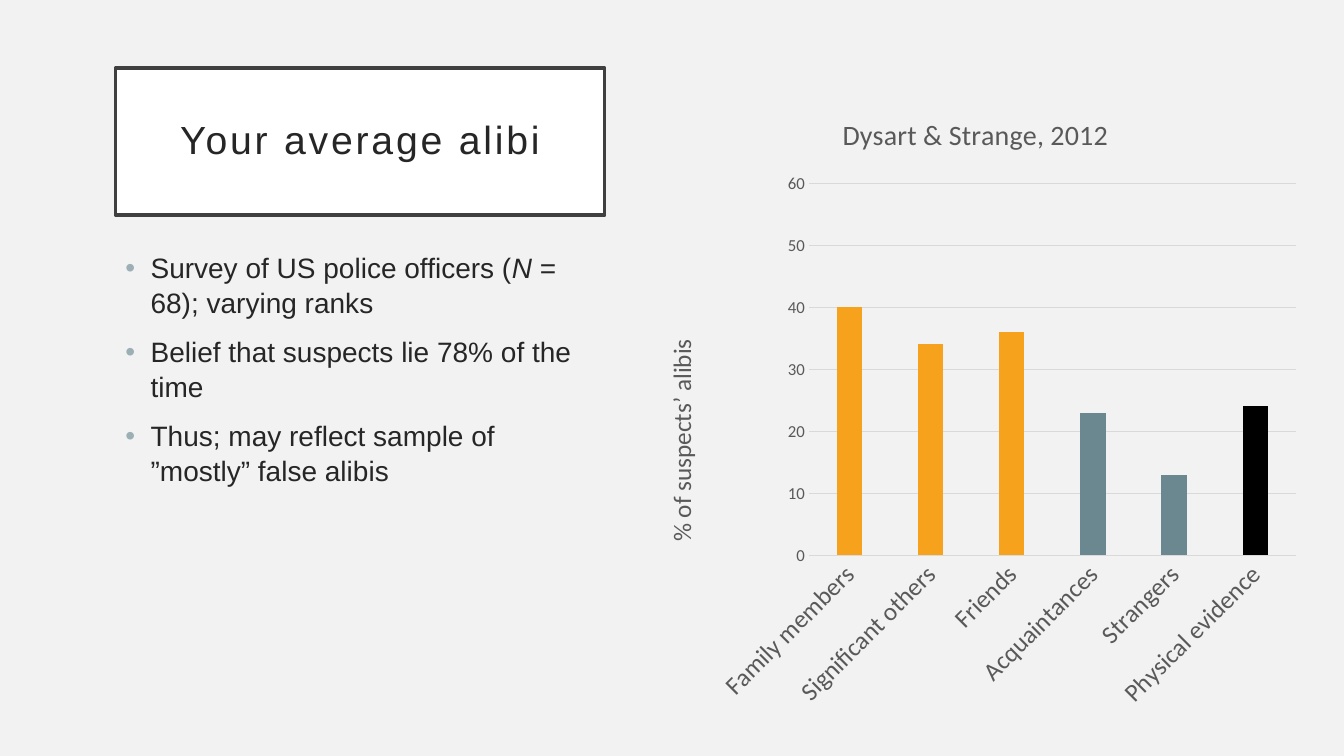
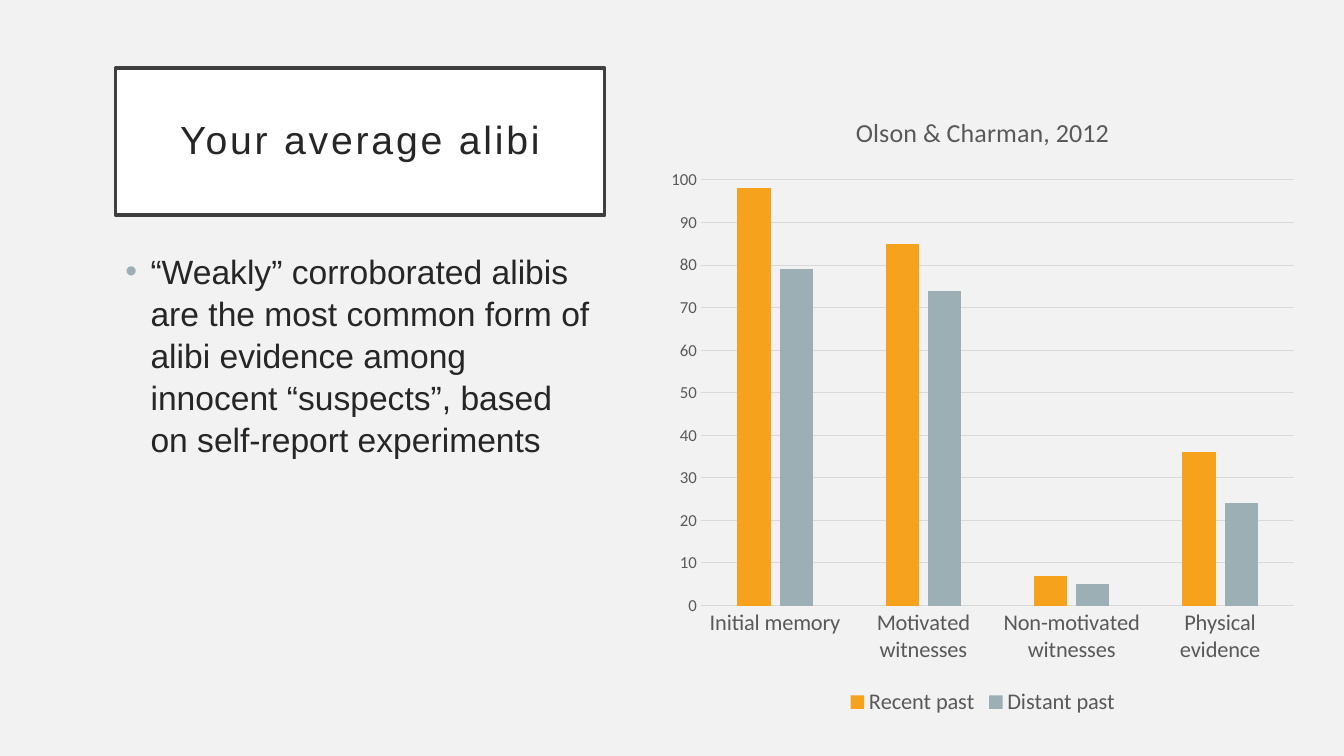
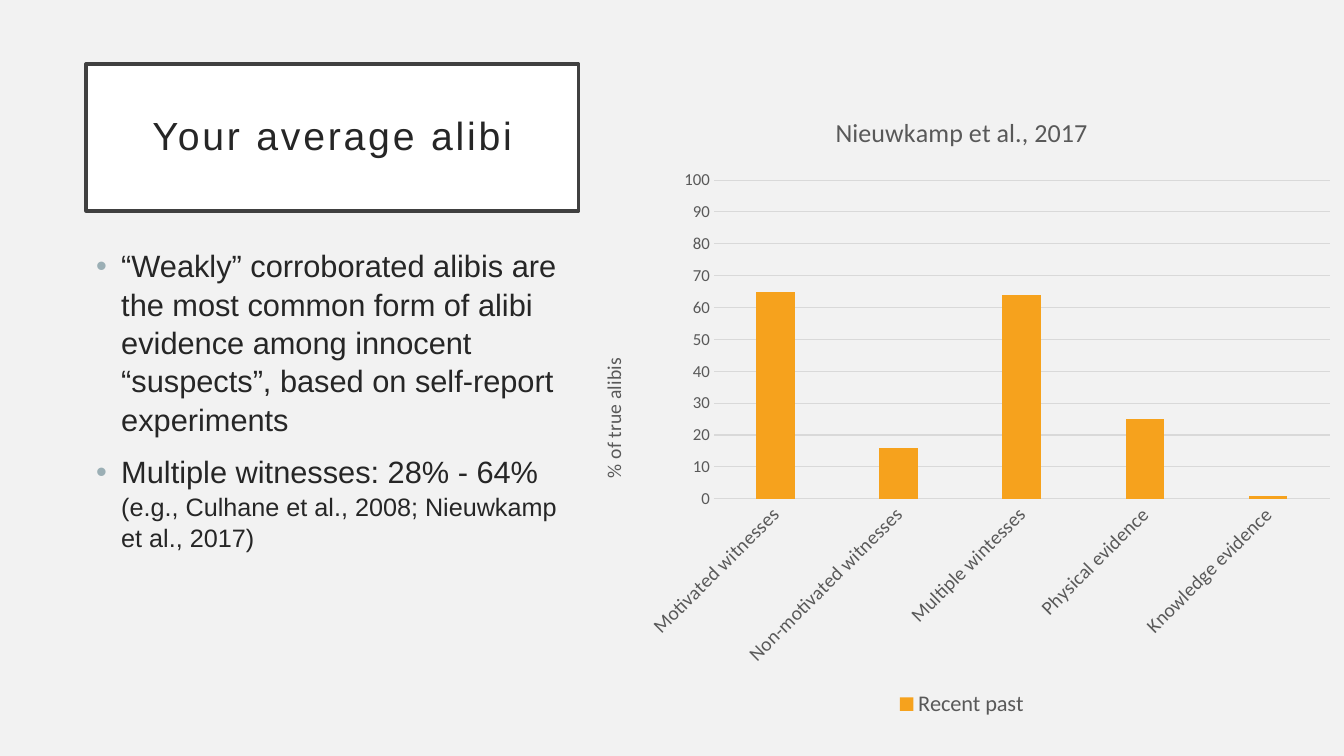
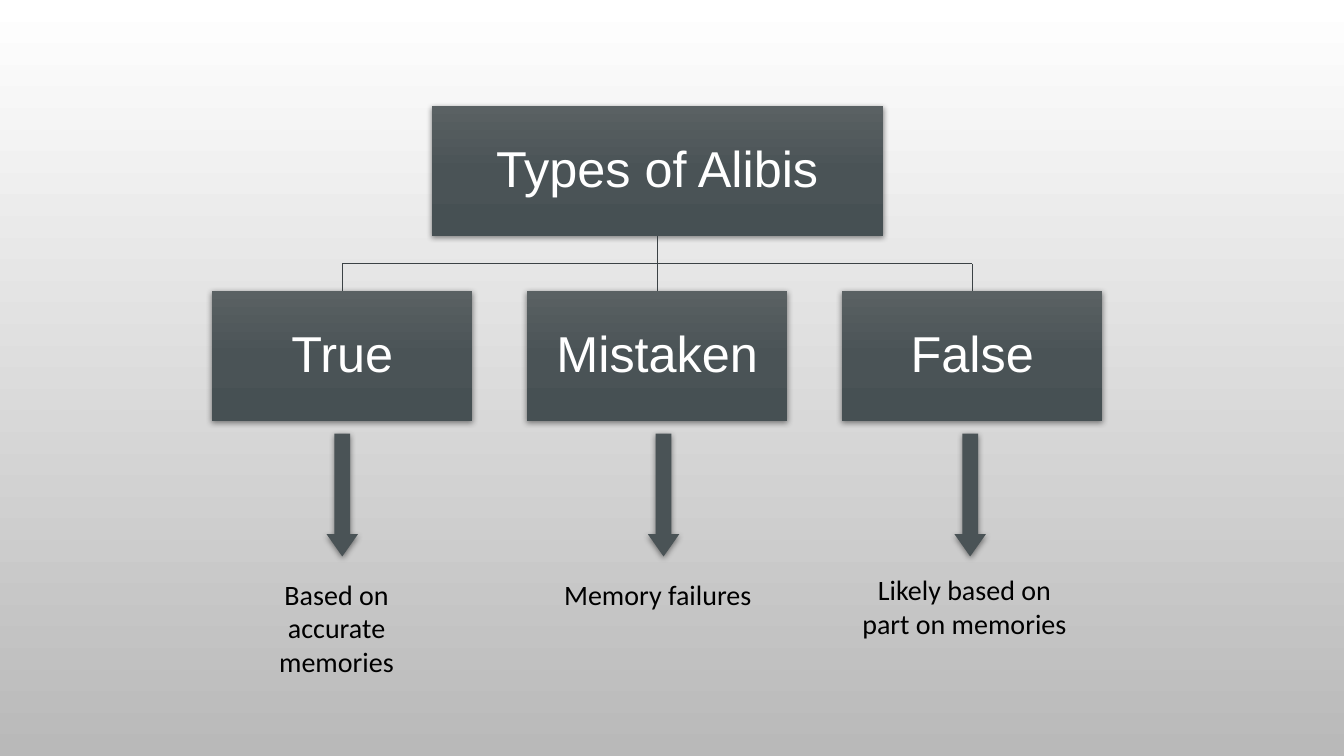
from copy import deepcopy
from dataclasses import dataclass

from pptx import Presentation
from pptx.chart.data import CategoryChartData
from pptx.dml.color import RGBColor
from pptx.enum.chart import XL_CHART_TYPE, XL_LEGEND_POSITION, XL_TICK_MARK
from pptx.enum.shapes import MSO_CONNECTOR, MSO_SHAPE
from pptx.enum.text import MSO_ANCHOR, PP_ALIGN
from pptx.oxml import parse_xml
from pptx.oxml.ns import nsdecls, qn
from pptx.util import Pt

PX = 9525


@dataclass(frozen=True)
class Theme:
    page: RGBColor = RGBColor.from_string("F2F2F2")
    white: RGBColor = RGBColor.from_string("FFFFFF")
    black: RGBColor = RGBColor.from_string("000000")
    ink: RGBColor = RGBColor.from_string("262626")
    frame: RGBColor = RGBColor.from_string("404040")
    chart_text: RGBColor = RGBColor.from_string("595959")
    grid: RGBColor = RGBColor.from_string("D9D9D9")
    orange: RGBColor = RGBColor.from_string("F6A21D")
    mist: RGBColor = RGBColor.from_string("9BAFB5")
    teal: RGBColor = RGBColor.from_string("6B8891")
    page_end: RGBColor = RGBColor.from_string("B9B9B9")
    slate_top: RGBColor = RGBColor.from_string("5A6163")
    slate: RGBColor = RGBColor.from_string("4A5356")
    slate_bottom: RGBColor = RGBColor.from_string("465053")
    link: RGBColor = RGBColor.from_string("3B4245")
    heading_font: str = "Arial"
    chart_font: str = "Calibri"
    title_size: int = 28
    node_size: int = 36
    label_size: int = 20
    legend_size: int = 16
    value_size: int = 12


theme = Theme()


def write(frame, paragraphs, size, color, font=theme.heading_font, align=None, anchor=None,
          inset=None, line_spacing=None, tracking=None, bullet=None):
    if anchor is not None:
        frame.word_wrap = True
        frame.vertical_anchor = anchor
    if inset is not None:
        frame.margin_left = frame.margin_right = inset * PX
        frame.margin_top = frame.margin_bottom = inset * PX
    for index, spans in enumerate(paragraphs):
        para = frame.add_paragraph() if index else frame.paragraphs[0]
        if align is not None:
            para.alignment = align
        if line_spacing is not None:
            para.line_spacing = line_spacing
        if bullet is not None:
            para.space_before = Pt(10)
            properties = para._p.get_or_add_pPr()
            properties.set("marL", str(24 * PX))
            properties.set("indent", str(-24 * PX))
            for markup in (f'<a:buClr {nsdecls("a")}><a:srgbClr val="{bullet}"/></a:buClr>',
                           f'<a:buFont {nsdecls("a")} typeface="Arial"/>',
                           f'<a:buChar {nsdecls("a")} char="•"/>'):
                properties.append(parse_xml(markup))
        for text, changes in spans:
            span = para.add_run()
            span.text = text
            span.font.name = font
            span.font.size = Pt(changes.get("size", size))
            span.font.bold = False
            span.font.italic = changes.get("italic", False)
            span.font.color.rgb = color
            if tracking is not None:
                span._r.get_or_add_rPr().set("spc", str(tracking * 100))


def paint_gradient(fill, element, colors):
    fill.gradient()
    fill.gradient_angle = 270
    stop_list = next(element.iter(qn("a:gsLst")))
    for _ in colors[2:]:
        stop_list.append(deepcopy(stop_list[-1]))
    for index, (stop, color) in enumerate(zip(fill.gradient_stops, colors)):
        stop.color.rgb = color
        stop.position = index / (len(colors) - 1)


deck = Presentation()
deck.slide_width = 1280 * PX
deck.slide_height = 720 * PX
blank = deck.slide_layouts[6]
deck.slide_master.background.fill.solid()
deck.slide_master.background.fill.fore_color.rgb = theme.page

weakly = ("“Weakly” corroborated alibis are the most common form of alibi evidence among "
          "innocent “suspects”, based on self-report experiments")

chart_pages = [
    dict(
        panel=(110, 65, 466), body_size=20, chart_box=(611, 87, 636, 599),
        body=[
            [("Survey of US police officers (", {}), ("N", {"italic": True}),
             (" = 68); varying ranks", {})],
            [("Belief that suspects lie 78% of the time", {})],
            [("Thus; may reflect sample of ”mostly” false alibis", {})],
        ],
        title="Dysart & Strange, 2012", title_size=20, category_size=18, maximum=60,
        axis_title="% of suspects’ alibis", slanted=True, legend=False,
        categories=["Family members", "Significant others", "Friends", "Acquaintances",
                    "Strangers", "Physical evidence"],
        series=[("Series 1", [40, 34, 36, 23, 13, 24], theme.orange)],
        points={3: theme.teal, 4: theme.teal, 5: theme.black},
    ),
    dict(
        panel=(110, 65, 466), body_size=24, chart_box=(627, 87, 618, 599),
        body=[[(weakly, {})]],
        title="Olson & Charman, 2012", title_size=18.6, category_size=16, maximum=100,
        axis_title=None, slanted=False, legend=True,
        categories=["Initial memory", "Motivated witnesses", "Non-motivated witnesses",
                    "Physical evidence"],
        series=[("Recent past", [98, 85, 7, 36], theme.orange),
                ("Distant past", [79, 74, 5, 24], theme.mist)],
        points={},
    ),
    dict(
        panel=(82, 61, 469), body_size=22, chart_box=(551, 87, 730, 601),
        body=[
            [(weakly, {})],
            [("Multiple witnesses: 28% - 64% ", {}),
             ("(e.g., Culhane et al., 2008; Nieuwkamp et al., 2017)", {"size": 18})],
        ],
        title="Nieuwkamp et al., 2017", title_size=18.6, category_size=14, maximum=100,
        axis_title="% of true alibis", slanted=True, legend=True,
        categories=["Motivated witnesses", "Non-motivated witnesses", "Multiple wintesses",
                    "Physical evidence", "Knowledge evidence"],
        series=[("Recent past", [65, 16, 64, 25, 1], theme.orange)],
        points={},
    ),
]

for content in chart_pages:
    page = deck.slides.add_slide(blank)
    left, top, width = content["panel"]

    title_box = page.shapes.add_shape(MSO_SHAPE.RECTANGLE, left * PX, top * PX, width * PX, 140 * PX)
    title_box.shadow.inherit = False
    title_box.fill.solid()
    title_box.fill.fore_color.rgb = theme.white
    title_box.line.color.rgb = theme.frame
    title_box.line.width = Pt(2.5)
    write(title_box.text_frame, [[("Your average alibi", {})]], theme.title_size, theme.ink,
          align=PP_ALIGN.CENTER, anchor=MSO_ANCHOR.MIDDLE, inset=19, line_spacing=0.9, tracking=2)

    body_box = page.shapes.add_textbox(left * PX, (top + 168) * PX, width * PX, 420 * PX)
    write(body_box.text_frame, content["body"], content["body_size"], theme.ink,
          anchor=MSO_ANCHOR.TOP, line_spacing=1.04, bullet=theme.mist)

    data = CategoryChartData()
    data.categories = content["categories"]
    for name, values, _ in content["series"]:
        data.add_series(name, values)
    chart = page.shapes.add_chart(XL_CHART_TYPE.COLUMN_CLUSTERED,
                                  *[length * PX for length in content["chart_box"]], data).chart
    chart.font.name = theme.chart_font
    chart.font.size = Pt(10)
    chart.has_title = True
    write(chart.chart_title.text_frame, [[(content["title"], {})]], content["title_size"],
          theme.chart_text, font=theme.chart_font)

    plot = chart.plots[0]
    plot.gap_width = 219
    plot.overlap = -27
    plot.vary_by_categories = False
    for series, (_, _, color) in zip(plot.series, content["series"]):
        series.invert_if_negative = False
        series.format.fill.solid()
        series.format.fill.fore_color.rgb = color
    for index, color in content["points"].items():
        point_fill = plot.series[0].points[index].format.fill
        point_fill.solid()
        point_fill.fore_color.rgb = color

    category_axis, value_axis = chart.category_axis, chart.value_axis
    for axis, size in ((category_axis, content["category_size"]), (value_axis, theme.value_size)):
        axis.major_tick_mark = XL_TICK_MARK.NONE
        axis.minor_tick_mark = XL_TICK_MARK.NONE
        axis.tick_labels.font.name = theme.chart_font
        axis.tick_labels.font.size = Pt(size)
        axis.tick_labels.font.color.rgb = theme.chart_text
    value_axis.minimum_scale = 0
    value_axis.maximum_scale = content["maximum"]
    value_axis.major_unit = 10
    value_axis.has_major_gridlines = True
    value_axis.format.line.fill.background()
    for line in (category_axis.format.line, value_axis.major_gridlines.format.line):
        line.color.rgb = theme.grid
        line.width = Pt(0.75)
    if content["slanted"]:
        labels = next(chart.element.iter(qn("c:catAx"))).find(qn("c:txPr"))
        labels.find(qn("a:bodyPr")).set("rot", "-2700000")
    if content["axis_title"]:
        value_axis.has_title = True
        write(value_axis.axis_title.text_frame, [[(content["axis_title"], {})]],
              content["category_size"], theme.chart_text, font=theme.chart_font)
        heading = next(chart.element.iter(qn("c:valAx"))).find(qn("c:title"))
        next(heading.iter(qn("a:bodyPr"))).set("rot", "-5400000")
    chart.has_legend = content["legend"]
    if content["legend"]:
        chart.legend.position = XL_LEGEND_POSITION.BOTTOM
        chart.legend.include_in_layout = False
        chart.legend.font.name = theme.chart_font
        chart.legend.font.size = Pt(theme.legend_size)
        chart.legend.font.color.rgb = theme.chart_text

page = deck.slides.add_slide(blank)
paint_gradient(page.background.fill, page.element, [theme.white, theme.page_end])

nodes = [("Types of Alibis", 411, 101, 430)]
for column, name in enumerate(("True", "Mistaken", "False")):
    nodes.append((name, 202 + 300 * column, 277, 248))

boxes = []
for name, left, top, width in nodes:
    box = page.shapes.add_shape(MSO_SHAPE.RECTANGLE, left * PX, top * PX, width * PX, 124 * PX)
    paint_gradient(box.fill, box.element, [theme.slate_top, theme.slate, theme.slate_bottom])
    write(box.text_frame, [[(name, {})]], theme.node_size, theme.white, align=PP_ALIGN.CENTER,
          anchor=MSO_ANCHOR.MIDDLE, inset=3, line_spacing=0.9)
    boxes.append(box)
root, true_box, mistaken_box, false_box = boxes

bar_top = 251
links = [
    (626, 225, 626, 277, root, mistaken_box),
    (326, bar_top, 926, bar_top, None, None),
    (326, bar_top, 326, 277, None, true_box),
    (926, bar_top, 926, 277, None, false_box),
]
for *ends, start_box, end_box in links:
    link = page.shapes.add_connector(MSO_CONNECTOR.STRAIGHT, *[length * PX for length in ends])
    link.line.color.rgb = theme.link
    link.line.width = Pt(1)
    link.element.spPr.append(parse_xml(f'<a:effectLst {nsdecls("a")}/>'))
    if start_box is not None:
        link.begin_connect(start_box, 2)
    if end_box is not None:
        link.end_connect(end_box, 0)

arrows = []
outcomes = [
    ("Based on accurate memories", 311, 213, 545, 74),
    ("Memory failures", 617, 519, 545, 42),
    ("Likely based on part on memories", 909, 811, 541, 74),
]
for text, arrow_left, label_left, label_top, label_height in outcomes:
    arrow = page.shapes.add_shape(MSO_SHAPE.DOWN_ARROW, arrow_left * PX, 413 * PX, 30 * PX, 117 * PX)
    arrow.adjustments[0] = 0.5
    arrow.adjustments[1] = 0.71
    arrow.fill.solid()
    arrow.fill.fore_color.rgb = theme.slate
    arrows.append(arrow)
    label = page.shapes.add_textbox(label_left * PX, label_top * PX, 215 * PX, label_height * PX)
    write(label.text_frame, [[(text, {})]], theme.label_size, theme.black, font=theme.chart_font,
          align=PP_ALIGN.CENTER, anchor=MSO_ANCHOR.TOP)

for shape in boxes + arrows:
    shape.line.fill.background()
    shape.shadow.inherit = False
    shape.element.spPr.find(qn("a:effectLst")).append(parse_xml(
        f'<a:outerShdw {nsdecls("a")} blurRad="{Pt(4.4)}" dist="{Pt(1.2)}" dir="5400000" '
        f'rotWithShape="0"><a:srgbClr val="{theme.black}"><a:alpha val="45000"/></a:srgbClr>'
        '</a:outerShdw>'))

deck.save("out.pptx")
